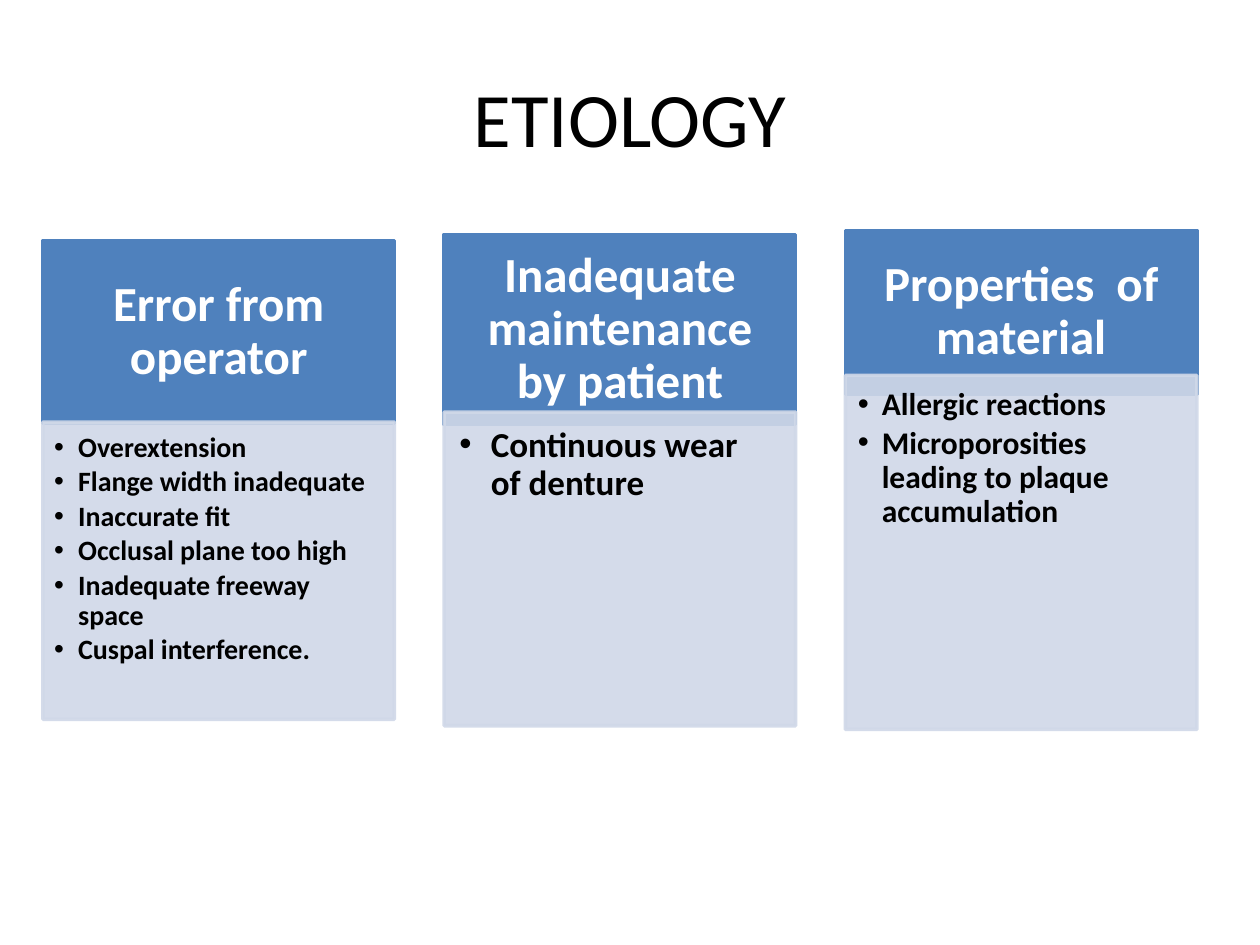
from lxml.etree import SubElement
from pptx import Presentation
from pptx.dml.color import RGBColor
from pptx.enum.shapes import MSO_SHAPE as Shape
from pptx.enum.text import MSO_ANCHOR as Anchor, PP_ALIGN as Align
from pptx.oxml.ns import qn
from pptx.util import Inches, Pt

BLUE, PALE, BLACK, WHITE = "4F81BD", "D0D8E8", "000000", "FFFFFF"
COLUMN_LEFT, COLUMN_STEP, COLUMN_WIDTH = 0.34, 3.185, 2.79

# heading, (top, height) of header and body, size, indent, insets, bullets
COLUMNS = [
    ("Error from operator", (1.91, 1.45), (3.35, 2.36),
     16, 0.19, (0.09, 0.09, 0.12, 0.14),
     ["Overextension", "Flange width inadequate", "Inaccurate fit",
      "Occlusal plane too high", "Inadequate freeway space",
      "Cuspal interference."]),
    ("Inadequate maintenance by patient", (1.86, 1.51), (3.27, 2.49),
     20, 0.25, (0.12, 0.12, 0.16, 0.17),
     ["Continuous wear of denture"]),
    ("Properties  of material", (1.83, 1.3), (2.98, 2.81),
     18, 0.19, (0.1, 0.1, 0.14, 0.16),
     ["Allergic reactions", "Microporosities leading to plaque accumulation"]),
]


def color(value):
    return RGBColor.from_string(value)


def set_font(para, size, value, bold=False):
    font = para.font
    font.name, font.size, font.bold = "Calibri", Pt(size), bold
    font.color.rgb = color(value)


def set_frame(frame, insets, anchor):
    frame.word_wrap = True
    frame.vertical_anchor = anchor
    (frame.margin_left, frame.margin_top,
     frame.margin_right, frame.margin_bottom) = map(Inches, insets)


def add_panel(page, left, span, value, opacity=100):
    top, height = span
    box = page.shapes.add_shape(Shape.RECTANGLE, Inches(left), Inches(top),
                                Inches(COLUMN_WIDTH), Inches(height))
    box.shadow.inherit = False
    box.fill.solid()
    box.fill.fore_color.rgb = color(value)
    box.line.color.rgb = color(value)
    box.line.width = Pt(2)
    if opacity < 100:
        for node in box.element.spPr.iter(qn("a:srgbClr")):
            SubElement(node, qn("a:alpha"), val=str(opacity * 1000))
    return box


def add_bullet(para, indent):
    props = para._p.get_or_add_pPr()
    props.set("marL", str(Inches(indent)))
    props.set("indent", str(-Inches(indent)))
    SubElement(props, qn("a:buFont"), typeface="Arial")
    SubElement(props, qn("a:buChar"), char="•")


def add_title(page, text):
    box = page.shapes.add_textbox(Inches(0.5), Inches(0.3),
                                  Inches(9), Inches(1.25))
    set_frame(box.text_frame, (0.1, 0.05, 0.1, 0.05), Anchor.MIDDLE)
    para = box.text_frame.paragraphs[0]
    para.text = text
    para.alignment = Align.CENTER
    set_font(para, 44, BLACK)


def add_header(page, left, span, text):
    frame = add_panel(page, left, span, BLUE).text_frame
    set_frame(frame, (0.22, 0.12, 0.22, 0.12), Anchor.MIDDLE)
    para = frame.paragraphs[0]
    para.text = text
    para.alignment = Align.CENTER
    para.line_spacing = 0.9
    set_font(para, 28, WHITE, bold=True)


def add_body(page, left, span, size, indent, insets, items):
    frame = add_panel(page, left, span, PALE, opacity=90).text_frame
    set_frame(frame, insets, Anchor.TOP)
    frame.text = "\n".join(items)
    for para in frame.paragraphs:
        para.alignment = Align.LEFT
        para.line_spacing = 0.9
        para.space_after = Pt(size * 0.15)
        add_bullet(para, indent)
        set_font(para, size, BLACK, bold=True)


def main():
    deck = Presentation()
    deck.slide_width, deck.slide_height = Inches(10), Inches(7.5)
    page = deck.slides.add_slide(deck.slide_layouts[6])

    add_title(page, "ETIOLOGY")

    # One header and one body per cause
    for index, (heading, header, body, *details) in enumerate(COLUMNS):
        left = COLUMN_LEFT + index * COLUMN_STEP
        add_header(page, left, header, heading)
        add_body(page, left, body, *details)

    deck.save("out.pptx")


if __name__ == "__main__":
    main()
